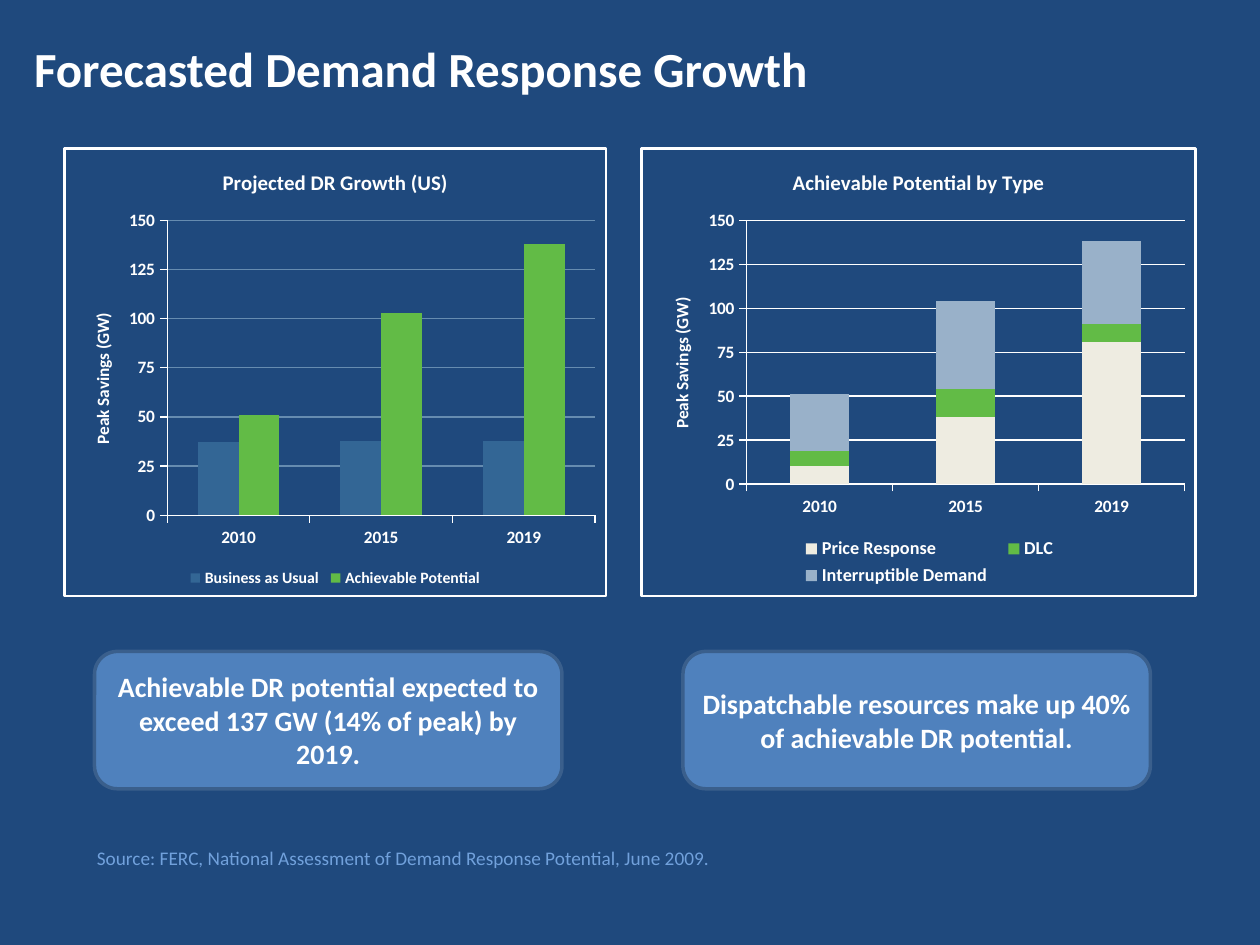
from pptx import Presentation
from pptx.chart.data import CategoryChartData
from pptx.dml.color import RGBColor
from pptx.enum.chart import XL_CHART_TYPE, XL_LEGEND_POSITION, XL_TICK_MARK
from pptx.enum.shapes import MSO_SHAPE
from pptx.enum.text import MSO_ANCHOR, PP_ALIGN
from pptx.oxml import parse_xml
from pptx.oxml.ns import nsdecls, qn
from pptx.util import Inches, Pt

FONT = "Calibri"
HEX = {
    "back": "1F497D", "white": "FFFFFF", "grid": "668CB0", "usual": "336695",
    "green": "62BB46", "cream": "EEECE1", "mist": "99B1C9",
    "box": "4F81BD", "edge": "3A5F8C", "source": "71A1DC",
}
YEARS = ["2010", "2015", "2019"]


def tint(name):
    """Return the named colour."""
    return RGBColor.from_string(HEX[name])


def style(font, size, color="white", bold=True):
    """Set the face, size, colour and weight of a font."""
    font.name, font.size, font.bold = FONT, Pt(size), bold
    font.color.rgb = tint(color)


def write(frame, text, size, color="white", bold=True, align=PP_ALIGN.LEFT):
    """Put one styled run in a text frame."""
    frame.word_wrap = True
    line = frame.paragraphs[0]
    line.alignment = align
    run = line.add_run()
    run.text = text
    style(run.font, size, color, bold)


def add_title(slide, text):
    """Move and fill the title placeholder."""
    title = slide.shapes.title
    title.left, title.top = Inches(0.17), Inches(0.25)
    title.width, title.height = Inches(9.67), Inches(0.57)
    title.text_frame.vertical_anchor = MSO_ANCHOR.MIDDLE
    write(title.text_frame, text, 28)


def place(parent, x, y, w, h, after=None, inner=False):
    """Give a plot area or a legend a fixed layout."""
    for old in parent.findall(qn("c:layout")):
        parent.remove(old)
    target = '<c:layoutTarget val="inner"/>' if inner else ""
    layout = parse_xml(
        f'<c:layout {nsdecls("c")}><c:manualLayout>{target}'
        '<c:xMode val="edge"/><c:yMode val="edge"/>'
        f'<c:x val="{x}"/><c:y val="{y}"/><c:w val="{w}"/><c:h val="{h}"/>'
        '</c:manualLayout></c:layout>')
    if after is None:
        parent.insert(0, layout)
    else:
        after.addnext(layout)


def add_frame(chart):
    """Draw a white border around the chart."""
    chart.element.find(qn("c:chart")).addnext(parse_xml(
        f'<c:spPr {nsdecls("c", "a")}><a:noFill/><a:ln w="{Pt(1.5)}">'
        f'<a:solidFill><a:srgbClr val="{HEX["white"]}"/></a:solidFill>'
        '</a:ln></c:spPr>'))


def set_axes(chart, grid):
    """Format both axes and the gridlines."""
    for axis in (chart.category_axis, chart.value_axis):
        axis.major_tick_mark = XL_TICK_MARK.OUTSIDE
        axis.minor_tick_mark = XL_TICK_MARK.NONE
        axis.format.line.color.rgb = tint("white")
        axis.format.line.width = Pt(0.75)
        style(axis.tick_labels.font, 10)
    axis = chart.value_axis
    axis.minimum_scale, axis.maximum_scale, axis.major_unit = 0, 150, 25
    axis.tick_labels.number_format = "0"
    axis.tick_labels.number_format_is_linked = False
    axis.has_major_gridlines = True
    axis.major_gridlines.format.line.color.rgb = tint(grid)
    axis.major_gridlines.format.line.width = Pt(0.75)
    write(axis.axis_title.text_frame, "Peak Savings (GW)", 10,
          align=PP_ALIGN.CENTER)


def add_bars(slide, kind, left, width, title, series, grid, tall, key, size):
    """Add a framed column chart."""
    data = CategoryChartData()
    data.categories = YEARS
    for name, _, values in series:
        data.add_series(name, values)
    chart = slide.shapes.add_chart(
        kind, Inches(left), Inches(1.17), Inches(width), Inches(3.57),
        data).chart
    style(chart.font, 18, bold=False)
    add_frame(chart)
    chart.has_title = True
    write(chart.chart_title.text_frame, title, 12, align=PP_ALIGN.CENTER)
    chart.chart_title.include_in_layout = False
    set_axes(chart, grid)
    plot = chart.plots[0]
    plot.gap_width, plot.vary_by_categories = 150, False
    plot.overlap = 100 if kind == XL_CHART_TYPE.COLUMN_STACKED else 0
    for bar, (_, color, _) in zip(plot.series, series):
        bar.format.fill.solid()
        bar.format.fill.fore_color.rgb = tint(color)
    chart.has_legend = True
    legend = chart.legend
    legend.position = XL_LEGEND_POSITION.BOTTOM
    legend.include_in_layout = False
    style(legend.font, size)
    area = chart.element.find(".//" + qn("c:plotArea"))
    place(area, 0.19, 0.16, 0.79, tall, inner=True)
    mark = chart.element.find(".//" + qn("c:legendPos"))
    place(mark.getparent(), *key, after=mark)


def add_box(slide, left, text):
    """Add a rounded box with a centred message."""
    box = slide.shapes.add_shape(
        MSO_SHAPE.ROUNDED_RECTANGLE,
        Inches(left), Inches(5.17), Inches(3.71), Inches(1.09))
    box.shadow.inherit = False
    box.fill.solid()
    box.fill.fore_color.rgb = tint("box")
    box.line.color.rgb = tint("edge")
    box.line.width = Pt(2)
    box.text_frame.vertical_anchor = MSO_ANCHOR.MIDDLE
    write(box.text_frame, text, 16, align=PP_ALIGN.CENTER)


def add_source(slide, text):
    """Add the source line."""
    box = slide.shapes.add_textbox(
        Inches(0.67), Inches(6.67), Inches(8.79), Inches(0.29))
    write(box.text_frame, text, 11, "source", False)


def main():
    """Build and save the slide."""
    deck = Presentation()
    deck.slide_width, deck.slide_height = Inches(10), Inches(7.5)
    slide = deck.slides.add_slide(deck.slide_layouts[5])
    slide.background.fill.solid()
    slide.background.fill.fore_color.rgb = tint("back")
    add_title(slide, "Forecasted Demand Response Growth")
    add_bars(
        slide, XL_CHART_TYPE.COLUMN_CLUSTERED, 0.5, 4.32,
        "Projected DR Growth (US)",
        [("Business as Usual", "usual", (37, 38, 38)),
         ("Achievable Potential", "green", (51, 103, 138))],
        "grid", 0.66, (0.22, 0.93, 0.56, 0.06), 9)
    add_bars(
        slide, XL_CHART_TYPE.COLUMN_STACKED, 5.08, 4.42,
        "Achievable Potential by Type",
        [("Price Response", "cream", (10, 38, 81)),
         ("DLC", "green", (9, 16, 10)),
         ("Interruptible Demand", "mist", (32, 50, 47))],
        "white", 0.59, (0.27, 0.86, 0.5, 0.13), 10.5)
    add_box(slide, 0.75, "Achievable DR potential expected to exceed 137 GW "
            "(14% of peak) by 2019.")
    add_box(slide, 5.42, "Dispatchable resources make up 40% of achievable "
            "DR potential.")
    add_source(slide, "Source: FERC, National Assessment of Demand Response "
               "Potential, June 2009.")
    deck.save("out.pptx")


if __name__ == "__main__":
    main()
